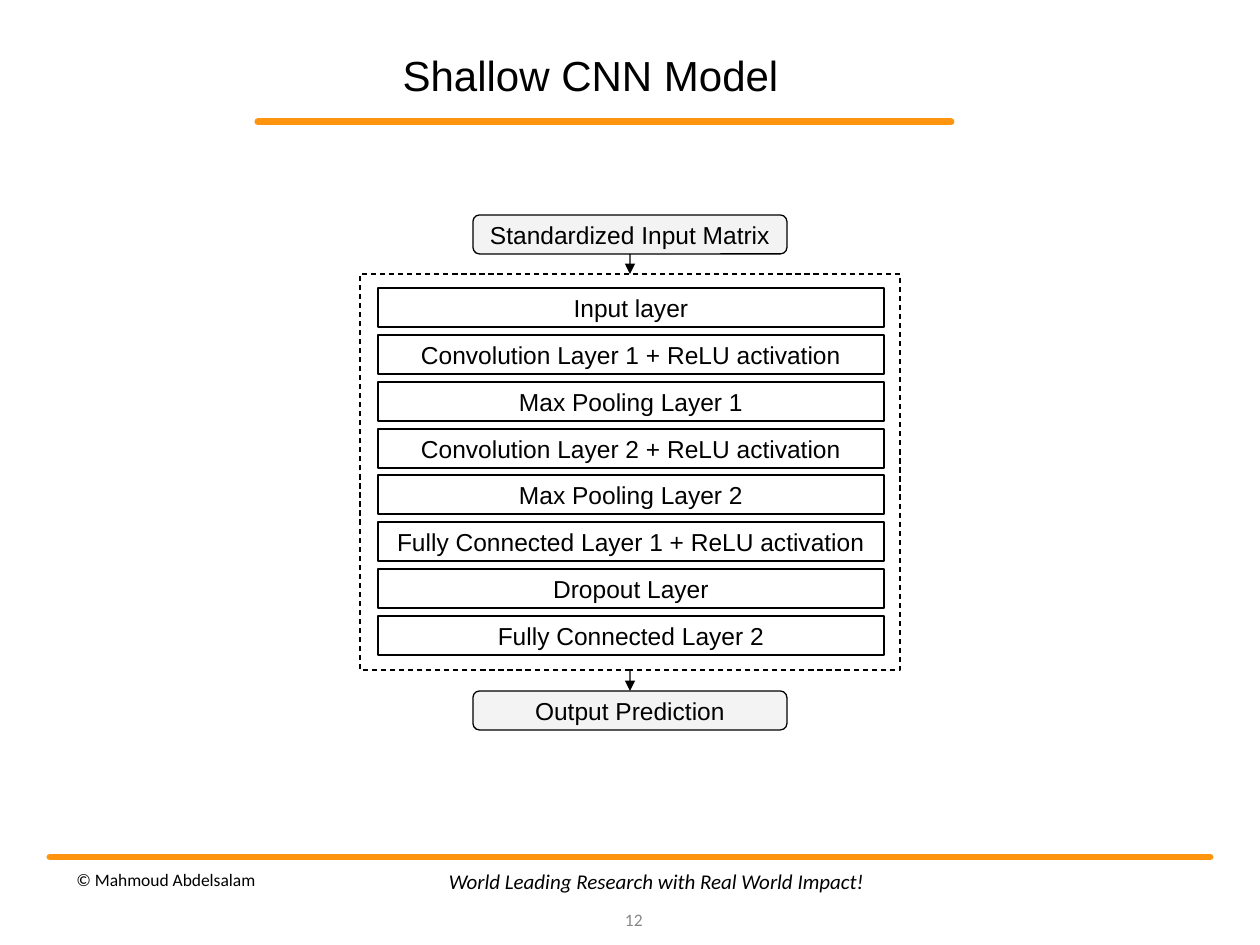
import pptx
import pptx.dml.color
import pptx.enum.dml
import pptx.enum.shapes
import pptx.enum.text
import pptx.oxml.ns
import pptx.util
from lxml import etree

RGBColor = pptx.dml.color.RGBColor
Align = pptx.enum.text.PP_ALIGN
Anchor = pptx.enum.text.MSO_ANCHOR
Shape = pptx.enum.shapes.MSO_SHAPE
qn = pptx.oxml.ns.qn

BLACK = RGBColor(0x00, 0x00, 0x00)
WHITE = RGBColor(0xFF, 0xFF, 0xFF)
ORANGE = RGBColor(0xFF, 0x95, 0x0E)
PALE_GRAY = RGBColor(0xF3, 0xF3, 0xF3)
MID_GRAY = RGBColor(0x88, 0x88, 0x88)

PX_PER_INCH = 126
LAYERS = [
    "Input layer",
    "Convolution Layer 1 + ReLU activation",
    "Max Pooling Layer 1",
    "Convolution Layer 2 + ReLU activation",
    "Max Pooling Layer 2",
    "Fully Connected Layer 1 + ReLU activation",
    "Dropout Layer",
    "Fully Connected Layer 2",
]
FIRST_LAYER_TOP, LAST_LAYER_TOP = 288, 616


def px(length):
    """Turn px into EMU."""
    return pptx.util.Emu(round(length * 914400 / PX_PER_INCH))


def write_text(box, text, size, font="Arial", color=BLACK, align=Align.CENTER,
               anchor=Anchor.MIDDLE, italic=False):
    """Put one styled run into a shape and return its paragraph."""
    frame = box.text_frame
    frame.word_wrap = True
    frame.vertical_anchor = anchor
    para = frame.paragraphs[0]
    para.alignment = align
    span = para.add_run()
    span.text = text
    span.font.name = font
    span.font.size = pptx.util.Pt(size)
    span.font.italic = italic
    span.font.color.rgb = color
    return para


def add_text(page, bounds, text, size, **style):
    """Add a text box and return its paragraph."""
    box = page.shapes.add_textbox(*map(px, bounds))
    return write_text(box, text, size, **style)


def add_box(page, kind, bounds, fill=None, text=None):
    """Add a thinly outlined shape, with a fill and a label if given."""
    box = page.shapes.add_shape(kind, *map(px, bounds))
    box.shadow.inherit = False
    box.line.color.rgb = BLACK
    box.line.width = pptx.util.Pt(0.75)
    if fill is None:
        box.fill.background()
    else:
        box.fill.solid()
        box.fill.fore_color.rgb = fill
    if text:
        write_text(box, text, 14)
        frame = box.text_frame
        frame.margin_top = frame.margin_bottom = pptx.util.Inches(0.1)
    return box


def add_line(page, start, end, color, width):
    """Add a straight connector without a shadow."""
    line = page.shapes.add_connector(
        pptx.enum.shapes.MSO_CONNECTOR.STRAIGHT, *map(px, start + end))
    line.line.color.rgb = color
    line.line.width = pptx.util.Pt(width)
    etree.SubElement(line._element.spPr, qn("a:effectLst"))
    return line


def add_rule(page, left, right, y):
    """Add a thick orange rule with round ends."""
    rule = add_line(page, (left, y), (right, y), ORANGE, 4)
    rule._element.spPr.find(qn("a:ln")).set("cap", "rnd")


def add_arrow(page, upper, lower):
    """Join the bottom of one box to the top of the next with an arrow."""
    arrow = add_line(page, (630, 0), (630, 0), BLACK, 0.75)
    arrow.begin_connect(upper, 2)
    arrow.end_connect(lower, 0)
    outline = arrow._element.spPr.find(qn("a:ln"))
    etree.SubElement(outline, qn("a:tailEnd"), type="triangle")


def add_model(page):
    """Draw the input, the framed stack of layers and the output."""
    frame = add_box(page, Shape.RECTANGLE, (360, 274, 540, 396))
    frame.line.dash_style = pptx.enum.dml.MSO_LINE.DASH
    pitch = (LAST_LAYER_TOP - FIRST_LAYER_TOP) / (len(LAYERS) - 1)
    for index, name in enumerate(LAYERS):
        top = round(FIRST_LAYER_TOP + index * pitch)
        add_box(page, Shape.RECTANGLE, (378, top, 506, 39), WHITE, name)
    source, result = [
        add_box(page, Shape.ROUNDED_RECTANGLE, (473, top, 314, 39), PALE_GRAY, name)
        for top, name in ((215, "Standardized Input Matrix"), (691, "Output Prediction"))
    ]
    add_arrow(page, source, frame)
    add_arrow(page, frame, result)


def main():
    """Build the slide and save it."""
    deck = pptx.Presentation()
    deck.slide_width, deck.slide_height = px(1260), px(945)
    page = deck.slides.add_slide(deck.slide_layouts[6])
    add_rule(page, 258, 951, 122)
    add_rule(page, 50, 1210, 857)
    title = add_text(page, (251, 43, 679, 64), "Shallow CNN Model", 24,
                     anchor=Anchor.BOTTOM)
    title.line_spacing = 0.9
    add_text(page, (64, 857, 347, 45), "© Mahmoud Abdelsalam", 10,
             font="Calibri", align=Align.LEFT)
    add_text(page, (381, 856, 551, 50),
             "World Leading Research with Real World Impact!", 12,
             font="Calibri", italic=True)
    add_model(page)
    add_text(page, (605, 895, 50, 50), "12", 10, font="Calibri",
             color=MID_GRAY, align=Align.RIGHT)
    deck.save("out.pptx")


if __name__ == "__main__":
    main()
